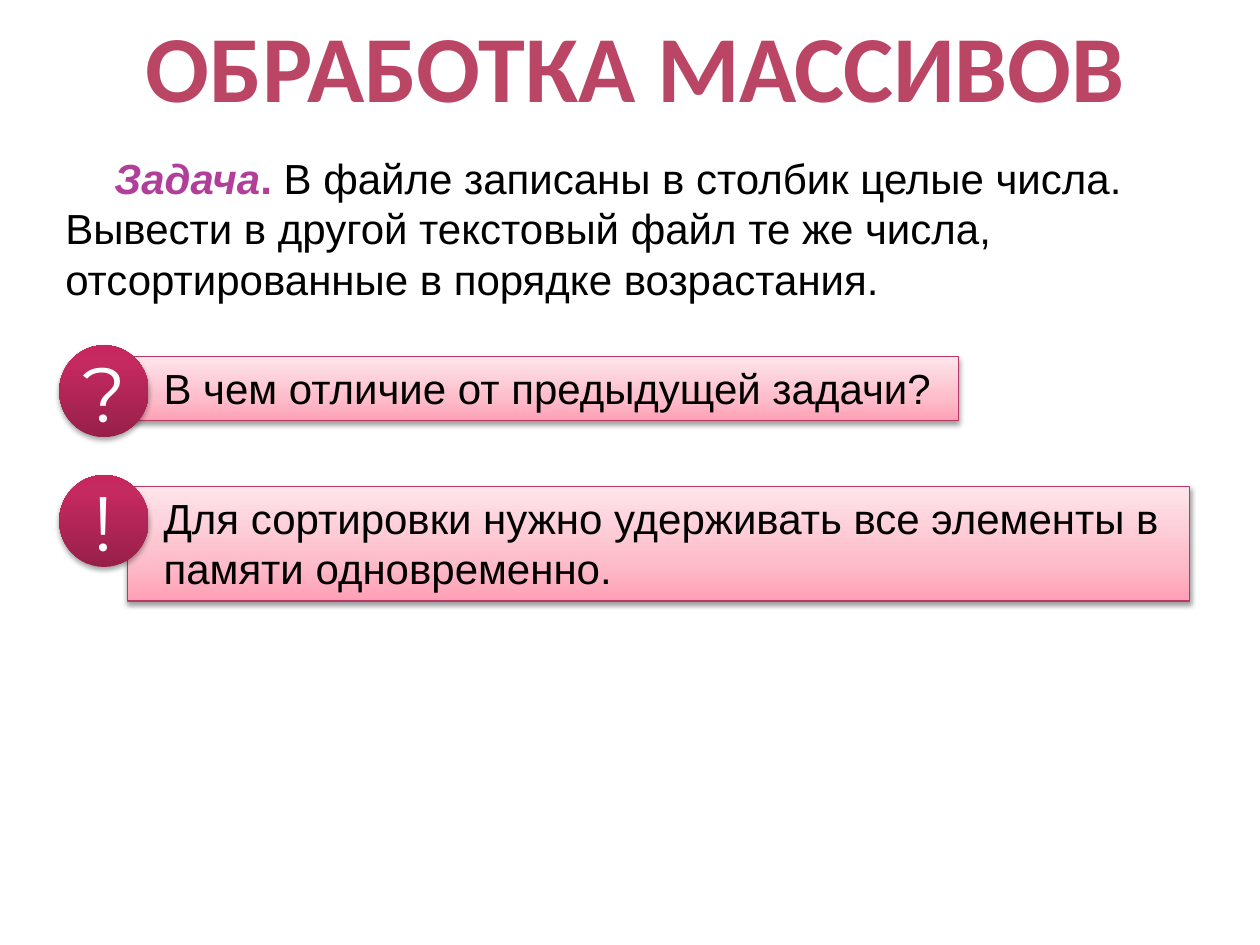
from lxml import etree
from pptx import Presentation
from pptx.dml.color import RGBColor
from pptx.enum.shapes import MSO_SHAPE
from pptx.enum.text import MSO_ANCHOR, PP_ALIGN
from pptx.oxml.ns import qn
from pptx.util import Inches, Pt

RECTANGLE, OVAL = MSO_SHAPE.RECTANGLE, MSO_SHAPE.OVAL
TOP, MIDDLE = MSO_ANCHOR.TOP, MSO_ANCHOR.MIDDLE
LEFT, CENTER = PP_ALIGN.LEFT, PP_ALIGN.CENTER

COLORS = {"title": "BA4565", "accent": "B13F9A", "text": "000000",
          "badge_text": "FFFFFF", "line": "B73965", "shadow": "000000"}
PANEL_GRADIENT = [(0, "FFA0B5"), (35, "FDBDCB"), (100, "FFE5EB")]
BADGE_GRADIENT = [(0, "972049"), (80, "C4295F"), (100, "C8265F")]

TITLE = "ОБРАБОТКА МАССИВОВ"
TASK = [
    ("Задача", "accent", True, True),
    (". ", "accent", True, False),
    ("В файле записаны в столбик целые числа. Вывести в другой текстовый файл "
     "те же числа, отсортированные в порядке возрастания.", "text", False, False),
]
CALLOUTS = [
    ("?", "В чем отличие от предыдущей задачи?", 2.83, 6.6, 0.51),
    ("!", "Для сортировки нужно удерживать все элементы в памяти одновременно.",
     3.86, 8.43, 0.91),
]
PANEL_LEFT, PANEL_INDENT = 1.01, 0.19
BADGE_LEFT, BADGE_RISE, BADGE_WIDTH, BADGE_HEIGHT = 0.47, 0.09, 0.71, 0.73


def style_run(run, font_name, size, color, bold=False, italic=False):
    run.font.name = font_name
    run.font.size = Pt(size)
    run.font.bold = bold
    run.font.italic = italic
    run.font.color.rgb = RGBColor.from_string(COLORS[color])


def add_text_box(slide, left, top, width, height, anchor):
    box = slide.shapes.add_textbox(*map(Inches, (left, top, width, height)))
    box.text_frame.word_wrap = True
    box.text_frame.vertical_anchor = anchor
    return box.text_frame.paragraphs[0]


def set_gradient(shape, stops):
    shape.fill.gradient()
    shape.fill.gradient_angle = 90
    stop_list = shape._element.spPr.find(".//" + qn("a:gsLst"))
    for old_stop in list(stop_list):
        stop_list.remove(old_stop)
    for position, color in stops:
        stop = etree.SubElement(stop_list, qn("a:gs"), pos=str(position * 1000))
        etree.SubElement(stop, qn("a:srgbClr"), val=color)


def set_shadow(shape, opacity, distance):
    shape.shadow.inherit = False
    effects = shape._element.spPr.find(qn("a:effectLst"))
    shadow = etree.SubElement(effects, qn("a:outerShdw"), blurRad=str(Pt(3.1)),
                              dist=str(Pt(distance)), dir="5400000", rotWithShape="0")
    color = etree.SubElement(shadow, qn("a:srgbClr"), val=COLORS["shadow"])
    etree.SubElement(color, qn("a:alpha"), val=str(opacity * 1000))


def add_part(group, kind, bounds, gradient, opacity, distance, text, anchor, alignment):
    shape = group.shapes.add_shape(kind, *map(Inches, bounds))
    set_gradient(shape, gradient)
    set_shadow(shape, opacity, distance)
    shape.text_frame.text = text
    shape.text_frame.vertical_anchor = anchor
    paragraph = shape.text_frame.paragraphs[0]
    paragraph.alignment = alignment
    return shape, paragraph


def add_callout(slide, symbol, text, top, width, height):
    group = slide.shapes.add_group_shape()
    panel, paragraph = add_part(group, RECTANGLE, (PANEL_LEFT, top, width, height),
                                PANEL_GRADIENT, 38, 1.6, text, TOP, LEFT)
    panel.line.color.rgb = RGBColor.from_string(COLORS["line"])
    panel.line.width = Pt(0.75)
    panel.text_frame.word_wrap = True
    paragraph._p.get_or_add_pPr().set("marL", str(Inches(PANEL_INDENT)))
    style_run(paragraph.runs[0], "Arial", 24, "text")

    bounds = (BADGE_LEFT, top - BADGE_RISE, BADGE_WIDTH, BADGE_HEIGHT)
    badge, paragraph = add_part(group, OVAL, bounds, BADGE_GRADIENT, 35, 1.8,
                                symbol, MIDDLE, CENTER)
    badge.line.fill.background()
    badge.text_frame.word_wrap = False
    style_run(paragraph.runs[0], "Montserrat", 44, "badge_text")


def main():
    presentation = Presentation()
    presentation.slide_width, presentation.slide_height = Inches(10), Inches(7.5)
    slide = presentation.slides.add_slide(presentation.slide_layouts[6])

    title = add_text_box(slide, 0.16, 0, 9.77, 1.02, MIDDLE)
    title.text = TITLE
    title.alignment = CENTER
    style_run(title.runs[0], "Calibri", 54, "title", bold=True)

    task = add_text_box(slide, 0.42, 1.16, 9.26, 1.31, TOP)
    task._p.get_or_add_pPr().set("indent", str(Inches(0.39)))
    for text, color, bold, italic in TASK:
        run = task.add_run()
        run.text = text
        style_run(run, "Arial", 24, color, bold, italic)

    for callout in CALLOUTS:
        add_callout(slide, *callout)
    presentation.save("out.pptx")


if __name__ == "__main__":
    main()
